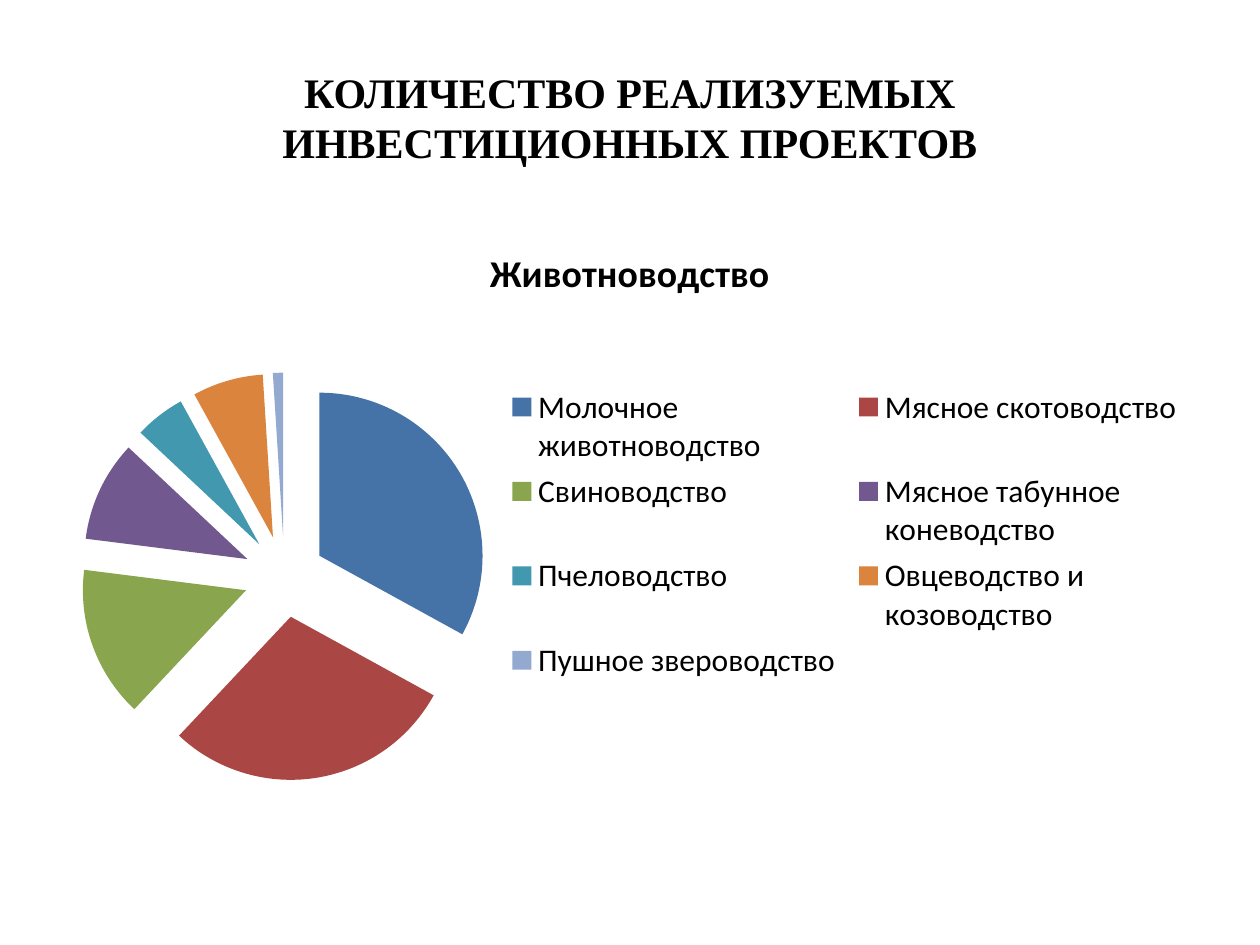
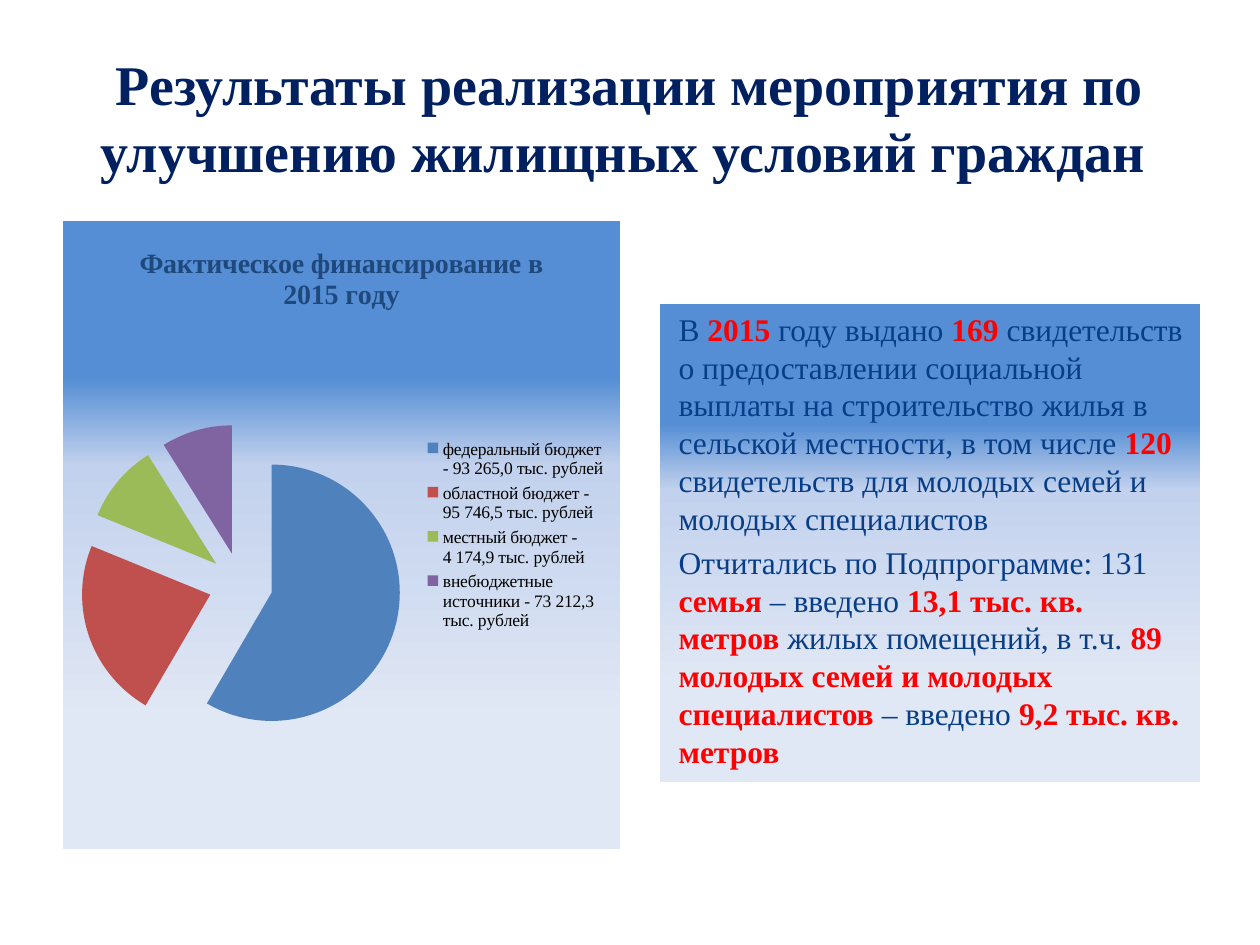
from lxml import etree
from pptx import Presentation
from pptx.chart.data import CategoryChartData
from pptx.dml.color import RGBColor
from pptx.enum import chart as charts, shapes, text
from pptx.oxml import ns
from pptx.util import Pt

SERIF, SANS = "Times New Roman", "Calibri"
BLACK, NAVY, TITLE_BLUE, BODY_BLUE, RED = "000000", "002060", "1F497D", "073E87", "FF0000"
DEEP_PALETTE = ["4572A7", "AA4643", "89A54E", "71588F", "4198AF", "DB843D", "93A9CF"]
THEME_PALETTE = ["4F81BD", "C0504D", "9BBB59", "8064A2"]
PANEL_STOPS = [(25, "558ED5"), (39, "C2D1ED"), (80, "E1E8F5")]
TITLE_BOX = (36, 21.6, 648, 90)

LIVESTOCK = {
    "Молочное\nживотноводство": 33,
    "Мясное скотоводство": 29,
    "Свиноводство": 15,
    "Мясное табунное\nконеводство": 10,
    "Пчеловодство": 5,
    "Овцеводство и\nкозоводство": 7,
    "Пушное звероводство": 1,
}
FUNDING = {
    "федеральный бюджет\n- 93 265,0 тыс. рублей": 59,
    "областной бюджет -\n95 746,5 тыс. рублей": 23,
    "местный бюджет -\n4 174,9 тыс. рублей": 10,
    "внебюджетные\nисточники - 73 212,3\nтыс. рублей": 9,
}
HOUSING_RESULTS = [
    ["В ", "2015", " году выдано ", "169 ",
     "свидетельств о предоставлении социальной выплаты на строительство жилья "
     "в сельской местности, в том числе ", "120 ",
     "свидетельств для молодых семей и молодых специалистов"],
    ["Отчитались по Подпрограмме: 131", " семья ", "– введено ", "13,1 тыс. кв. метров ",
     "жилых помещений, в т.ч. ", "89 молодых семей и молодых специалистов ",
     "– введено ", "9,2 тыс. кв. метров"],
]


def color(value):
    """Turn a hex string into a colour."""
    return RGBColor.from_string(value)


def style_font(font, size, name, fill, bold=False):
    """Set the size, typeface, colour and weight of a font."""
    font.size, font.name, font.bold = Pt(size), name, bold
    font.color.rgb = color(fill)


def add_run(paragraph, content, **style):
    """Append formatted text to a paragraph."""
    run = paragraph.add_run()
    run.text = content
    style_font(run.font, **style)


def panel_gradient():
    """Return the vertical gradient shared by the panels."""
    gradient = etree.Element(ns.qn("a:gradFill"), rotWithShape="1")
    stops = etree.SubElement(gradient, ns.qn("a:gsLst"))
    for position, value in PANEL_STOPS:
        stop = etree.SubElement(stops, ns.qn("a:gs"), pos=str(position * 1000))
        etree.SubElement(stop, ns.qn("a:srgbClr"), val=value)
    etree.SubElement(gradient, ns.qn("a:lin"), ang="5400000", scaled="0")
    return gradient


def set_layout(parent, index, area, chart_box, inner=False):
    """Place a chart part by its area in points within the chart box."""
    for former in parent.findall(ns.qn("c:layout")):
        parent.remove(former)
    layout = etree.Element(ns.qn("c:layout"))
    manual = etree.SubElement(layout, ns.qn("c:manualLayout"))
    settings = [("layoutTarget", "inner")] if inner else []
    settings += [("xMode", "edge"), ("yMode", "edge")]
    sides = chart_box[2:] * 2
    settings += [(tag, str(length / side)) for tag, length, side in zip("xywh", area, sides)]
    for tag, value in settings:
        etree.SubElement(manual, ns.qn(f"c:{tag}"), val=value)
    parent.insert(index, layout)


def add_title(slide, content, size, fill):
    """Add the centred slide title."""
    frame = slide.shapes.add_textbox(*map(Pt, TITLE_BOX)).text_frame
    frame.word_wrap = True
    frame.vertical_anchor = text.MSO_ANCHOR.MIDDLE
    paragraph = frame.paragraphs[0]
    paragraph.alignment = text.PP_ALIGN.CENTER
    add_run(paragraph, content, size=size, name=SERIF, fill=fill, bold=True)


def add_pie(slide, box, title, values, palette, title_style, legend_style,
            pie_area, legend_area, panel=False):
    """Add an exploded pie with a title and a legend on the right."""
    data = CategoryChartData()
    data.categories = list(values)
    data.add_series(title, list(values.values()))
    chart = slide.shapes.add_chart(charts.XL_CHART_TYPE.PIE, *map(Pt, box), data).chart
    style_font(chart.font, 18, SANS, BLACK)
    chart.has_title = True
    add_run(chart.chart_title.text_frame.paragraphs[0], title, bold=True, **title_style)
    chart.has_legend = True
    chart.legend.position = charts.XL_LEGEND_POSITION.RIGHT
    chart.legend.include_in_layout = False
    style_font(chart.legend.font, **legend_style)

    root = chart.element
    series_name = root.xpath(".//c:ser/c:tx")[0]
    series_name.addnext(etree.Element(ns.qn("c:explosion"), val="25"))
    set_layout(root.xpath(".//c:plotArea")[0], 0, pie_area, box, inner=True)
    set_layout(root.xpath(".//c:legend")[0], 1, legend_area, box)
    plot = chart.plots[0]
    plot.vary_by_categories = True
    for index, value in enumerate(palette):
        slice_format = plot.series[0].points[index].format
        slice_format.fill.solid()
        slice_format.fill.fore_color.rgb = color(value)
        slice_format.line.fill.background()
    if panel:
        properties = etree.Element(ns.qn("c:spPr"))
        properties.append(panel_gradient())
        root.find(ns.qn("c:chart")).addnext(properties)


def add_results_panel(slide, box, paragraphs):
    """Add the panel whose key figures, every second run, are bold red."""
    panel = slide.shapes.add_shape(shapes.MSO_SHAPE.RECTANGLE, *map(Pt, box))
    panel.shadow.inherit = False
    panel.line.fill.background()
    geometry = panel.element.spPr.find(ns.qn("a:prstGeom"))
    geometry.addnext(panel_gradient())
    frame = panel.text_frame
    frame.word_wrap = True
    frame.vertical_anchor = text.MSO_ANCHOR.TOP
    frame.margin_left = Pt(10.8)
    for index, runs in enumerate(paragraphs):
        paragraph = frame.add_paragraph() if index else frame.paragraphs[0]
        paragraph.alignment = text.PP_ALIGN.LEFT
        paragraph.space_before = Pt(3.6 if index else 0)
        for position, content in enumerate(runs):
            key = position % 2 == 1
            add_run(paragraph, content, size=18, name=SERIF,
                    fill=RED if key else BODY_BLUE, bold=key)


def build_livestock_slide(slide):
    """Show the investment projects by livestock branch."""
    add_title(slide, "КОЛИЧЕСТВО РЕАЛИЗУЕМЫХ ИНВЕСТИЦИОННЫХ ПРОЕКТОВ", 24, BLACK)
    add_pie(slide, (36, 126, 648, 356.4), "Животноводство", LIVESTOCK, DEEP_PALETTE,
            title_style=dict(size=21.6, name=SANS, fill=BLACK),
            legend_style=dict(size=18, name=SANS, fill=BLACK),
            pie_area=(9.5, 87, 234, 233), legend_area=(249, 91, 395, 176))


def build_housing_slide(slide):
    """Show the housing funding and its results."""
    add_title(slide, "Результаты реализации мероприятия по улучшению жилищных условий граждан ",
              32, NAVY)
    add_pie(slide, (36, 126, 318.2, 359.3), "Фактическое финансирование в 2015 году",
            FUNDING, THEME_PALETTE,
            title_style=dict(size=16, name=SERIF, fill=TITLE_BLUE),
            legend_style=dict(size=10, name=SERIF, fill=BLACK),
            pie_area=(9.3, 116.4, 184.5, 183.2), legend_area=(203, 122.3, 111, 115),
            panel=True)
    add_results_panel(slide, (377, 173.5, 308.8, 273.6), HOUSING_RESULTS)


def main():
    """Build and save the presentation."""
    presentation = Presentation()
    presentation.slide_width, presentation.slide_height = Pt(720), Pt(540)
    for build in (build_livestock_slide, build_housing_slide):
        build(presentation.slides.add_slide(presentation.slide_layouts[6]))
    presentation.save("out.pptx")


if __name__ == "__main__":
    main()
